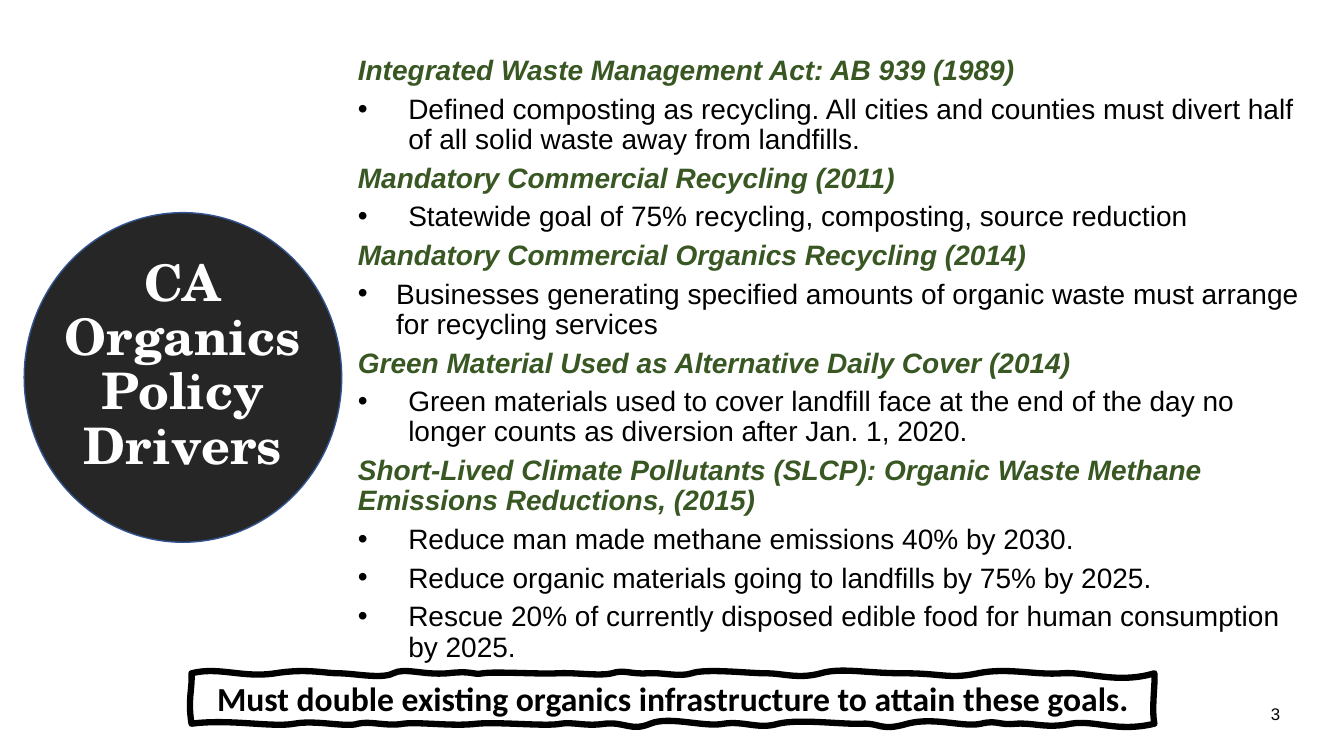
import dataclasses
import typing

import lxml.etree
import pptx
import pptx.dml.color
import pptx.enum.shapes
import pptx.enum.text
import pptx.oxml.ns
import pptx.util

GREEN = pptx.dml.color.RGBColor(0x38, 0x57, 0x23)
BLACK = pptx.dml.color.RGBColor(0x00, 0x00, 0x00)
WHITE = pptx.dml.color.RGBColor(0xFF, 0xFF, 0xFF)
CHARCOAL = pptx.dml.color.RGBColor(0x26, 0x26, 0x26)
BLUE = pptx.dml.color.RGBColor(0x32, 0x54, 0x91)

WIDTH, HEIGHT = pptx.util.Inches(13.33), pptx.util.Inches(7.5)
COLUMN, ROW = WIDTH / 40, HEIGHT / 30
UNIT = pptx.util.Inches(0.01)

ALIGN = pptx.enum.text.PP_ALIGN
MIDDLE = pptx.enum.text.MSO_ANCHOR.MIDDLE


@dataclasses.dataclass(frozen=True)
class Area:
    """A rectangle in grid columns and rows."""
    column: float
    row: float
    columns: float
    rows: float

    def lengths(self) -> tuple[int, int, int, int]:
        return (round(self.column * COLUMN), round(self.row * ROW),
                round(self.columns * COLUMN), round(self.rows * ROW))


@dataclasses.dataclass(frozen=True)
class Style:
    font: str
    size: float
    color: pptx.dml.color.RGBColor
    bold: bool = False
    italic: bool = False


@dataclasses.dataclass(frozen=True)
class Policy:
    name: str
    points: tuple[str, ...]
    indent: float = 0.5


class Curve(typing.NamedTuple):
    """Two control points and an end, in hundredths of an inch."""
    x1: int
    y1: int
    x2: int
    y2: int
    x: int
    y: int = 0


CIRCLE = Area(0.72, 8.44, 9.45, 13.08)
TITLE = Area(0.3, 9.76, 10.29, 9.56)
BODY = Area(10.35, 2.04, 28.65, 25.88)
BANNER = Area(5.7, 26.72, 28.65, 2)
NUMBER = Area(36.6, 27.52, 1.8, 1.6)

HEADING = Style("Arial", 20, GREEN, bold=True, italic=True)
POINT = Style("Arial", 20, BLACK)
TITLE_STYLE = Style("TeX Gyre Schola", 36, WHITE, bold=True)
BANNER_STYLE = Style("Calibri", 24, BLACK, bold=True)
NUMBER_STYLE = Style("Arial", 12, BLACK)

POLICIES = (
    Policy("Integrated Waste Management Act: AB 939 (1989)", (
        "Defined composting as recycling. All cities and counties must divert half "
        "of all solid waste away from landfills.",)),
    Policy("Mandatory Commercial Recycling (2011)", (
        "Statewide goal of 75% recycling, composting, source reduction",)),
    Policy("Mandatory Commercial Organics Recycling (2014)", (
        "Businesses generating specified amounts of organic waste must arrange "
        "for recycling services",), indent=0.38),
    Policy("Green Material Used as Alternative Daily Cover (2014)", (
        "Green materials used to cover landfill face at the end of the day no "
        "longer counts as diversion after Jan. 1, 2020.",)),
    Policy("Short-Lived Climate Pollutants (SLCP): Organic Waste Methane "
           "Emissions Reductions, (2015)", (
               "Reduce man made methane emissions 40% by 2030.",
               "Reduce organic materials going to landfills by 75% by 2025.",
               "Rescue 20% of currently disposed edible food for human consumption "
               "by 2025.")),
)

BANNER_DEPTH = 50
TOP_EDGE = (
    Curve(27, -7, 51, 5, 83), Curve(114, -5, 132, 0, 146), Curve(161, 0, 189, 6, 200),
    Curve(212, -6, 229, 2, 254), Curve(280, -3, 278, 2, 289), Curve(301, -2, 344, 1, 363),
    Curve(381, -1, 404, 3, 417), Curve(429, -4, 435, 1, 452), Curve(469, -1, 483, 4, 496),
    Curve(510, -5, 552, 0, 570), Curve(587, 0, 602, 6, 624), Curve(645, -6, 668, 0, 707),
    Curve(745, 0, 751, 6, 780), Curve(809, -6, 837, 2, 863), Curve(888, -2, 918, 11, 955),
)
RIGHT_EDGE = Curve(956, 10, 952, 35, 955, BANNER_DEPTH)
BOTTOM_EDGE = (
    Curve(917, 9, 897, -4, 872), Curve(848, 5, 836, -1, 818), Curve(800, 2, 800, -4, 783),
    Curve(766, 4, 737, -7, 710), Curve(683, 8, 683, -1, 665), Curve(647, 1, 603, -5, 582),
    Curve(562, 6, 548, -3, 528), Curve(509, 4, 474, -8, 455), Curve(436, 8, 430, -2, 410),
    Curve(391, 3, 379, -2, 366), Curve(353, 3, 306, -2, 283), Curve(260, 3, 226, -2, 210),
    Curve(194, 3, 177, -3, 165), Curve(154, 4, 123, -4, 102), Curve(80, 4, 38, -5, 0),
)
LEFT_EDGE = Curve(-4, 26, 1, 15, 0)


def place(shape, area: Area) -> None:
    shape.left, shape.top, shape.width, shape.height = area.lengths()


def add_span(para, text: str, style: Style) -> None:
    span = para.add_run()
    span.text = text
    span.font.name, span.font.size = style.font, pptx.util.Pt(style.size)
    span.font.bold, span.font.italic = style.bold, style.italic
    span.font.color.rgb = style.color


def space(para, after: float = 0, lines: float = 1) -> None:
    para.space_before, para.space_after = pptx.util.Pt(0), pptx.util.Pt(after)
    para.line_spacing = lines


def set_bullet(para, indent: float) -> None:
    """Hang the paragraph by indent inches; zero means no bullet."""
    properties = para._p.get_or_add_pPr()
    properties.set("marL", str(pptx.util.Inches(indent)))
    properties.set("indent", str(-pptx.util.Inches(indent)))
    tag = "a:buChar" if indent else "a:buNone"
    bullet = lxml.etree.SubElement(properties, pptx.oxml.ns.qn(tag))
    if indent:
        bullet.set("char", "•")


def prepare_frame(shape, anchor=MIDDLE):
    frame = shape.text_frame
    frame.word_wrap = True
    frame.auto_size = pptx.enum.text.MSO_AUTO_SIZE.NONE
    frame.vertical_anchor = anchor
    return frame


def fill_body(body) -> None:
    frame = prepare_frame(body, pptx.enum.text.MSO_ANCHOR.TOP)
    entries = [entry for policy in POLICIES for entry in (
        (policy.name, HEADING, 0),
        *((point, POINT, policy.indent) for point in policy.points))]
    for index, (text, style, indent) in enumerate(entries):
        para = frame.add_paragraph() if index else frame.paragraphs[0]
        space(para, after=6, lines=0.9)
        set_bullet(para, indent)
        add_span(para, text, style)


def bend(shape, curves: typing.Sequence[Curve]) -> None:
    """Turn each straight segment of a freeform into its curve."""
    qn = pptx.oxml.ns.qn
    for line, curve in zip(list(shape._element.iter(qn("a:lnTo"))), curves, strict=True):
        bezier = lxml.etree.Element(qn("a:cubicBezTo"))
        for x, y in (curve[:2], curve[2:4], curve[4:]):
            lxml.etree.SubElement(bezier, qn("a:pt"), x=str(x), y=str(y))
        line.getparent().replace(line, bezier)


def add_banner(page) -> None:
    left, top, _, _ = BANNER.lengths()
    lower = [Curve(c.x1, c.y1 + BANNER_DEPTH, c.x2, c.y2 + BANNER_DEPTH, c.x, BANNER_DEPTH)
             for c in BOTTOM_EDGE]
    curves = (*TOP_EDGE, RIGHT_EDGE, *lower, LEFT_EDGE)
    builder = page.shapes.build_freeform(0, 0, scale=float(UNIT))
    builder.add_line_segments([(curve.x, curve.y) for curve in curves], close=True)
    banner = builder.convert_to_shape(left, top)
    bend(banner, curves)
    banner.shadow.inherit = False
    banner.fill.background()
    banner.line.color.rgb, banner.line.width = BLACK, pptx.util.Pt(4.5)
    para = prepare_frame(banner).paragraphs[0]
    para.alignment = ALIGN.CENTER
    add_span(para, "Must double existing organics infrastructure to attain these goals.",
             BANNER_STYLE)


def add_title(page) -> None:
    title = page.shapes.title
    place(title, TITLE)
    para = prepare_frame(title).paragraphs[0]
    para.alignment = ALIGN.CENTER
    space(para, lines=0.9)
    add_span(para, "CA", TITLE_STYLE)
    para.add_line_break()
    add_span(para, "Organics Policy Drivers", TITLE_STYLE)
    circle = page.shapes.add_shape(
        pptx.enum.shapes.MSO_SHAPE.FLOWCHART_CONNECTOR, *CIRCLE.lengths())
    circle.shadow.inherit = False
    circle.fill.solid()
    circle.fill.fore_color.rgb = CHARCOAL
    circle.line.color.rgb, circle.line.width = BLUE, pptx.util.Pt(1)
    title._element.addprevious(circle._element)


def main() -> None:
    deck = pptx.Presentation()
    deck.slide_width, deck.slide_height = WIDTH, HEIGHT
    page = deck.slides.add_slide(deck.slide_layouts[1])
    add_title(page)
    body = page.placeholders[1]
    place(body, BODY)
    fill_body(body)
    add_banner(page)
    para = prepare_frame(page.shapes.add_textbox(*NUMBER.lengths())).paragraphs[0]
    para.alignment = ALIGN.RIGHT
    add_span(para, "3", NUMBER_STYLE)
    deck.save("out.pptx")


if __name__ == "__main__":
    main()
